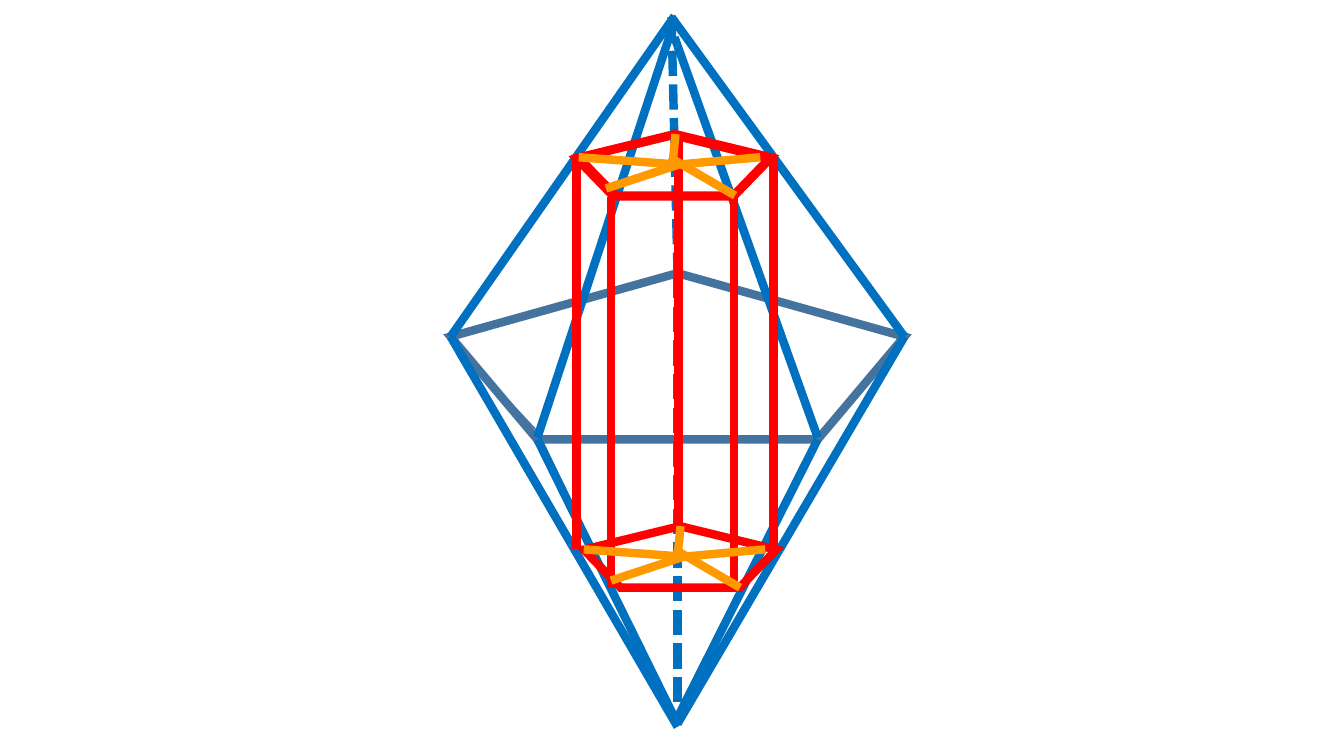
import pptx
import pptx.util
import pptx.dml.color
import pptx.enum.dml
import pptx.enum.shapes
import lxml.etree

PX = 9144
BLUE = pptx.dml.color.RGBColor(0x00, 0x70, 0xC0)
SLATE = pptx.dml.color.RGBColor(0x43, 0x73, 0x9E)
RED = pptx.dml.color.RGBColor(0xFF, 0x00, 0x00)
ORANGE = pptx.dml.color.RGBColor(0xFF, 0x99, 0x00)
DRAWING = "{http://schemas.openxmlformats.org/drawingml/2006/main}"


def add_edge(shapes, start, end, color, dashed=False):
    edge = shapes.add_connector(
        pptx.enum.shapes.MSO_CONNECTOR.STRAIGHT,
        *[value * PX for value in start + end])
    edge.line.color.rgb = color
    edge.line.width = pptx.util.Pt(6)
    if dashed:
        edge.line.dash_style = pptx.enum.dml.MSO_LINE.SQUARE_DOT
    properties = edge._element.spPr
    lxml.etree.SubElement(properties, DRAWING + "effectLst")


def add_pentagon(shapes, left, top, width, height, color):
    pentagon = shapes.add_shape(
        pptx.enum.shapes.MSO_SHAPE.REGULAR_PENTAGON,
        left * PX, top * PX, width * PX, height * PX)
    pentagon.shadow.inherit = False
    pentagon.fill.background()
    pentagon.line.color.rgb = color
    pentagon.line.width = pptx.util.Pt(6)
    outline = pentagon._element.spPr.find(DRAWING + "ln")
    lxml.etree.SubElement(outline, DRAWING + "miter", lim="800000")


deck = pptx.Presentation()
deck.slide_width = 1333 * PX
deck.slide_height = 750 * PX
slide = deck.slides.add_slide(deck.slide_layouts[6])

builder = slide.shapes.build_freeform(449, 338, scale=PX)
builder.add_line_segments(
    [(534, 429), (671, 716), (453, 351), (453, 348)], close=False)
facet = builder.convert_to_shape()
facet.shadow.inherit = False
facet.fill.background()
facet.line.color.rgb = SLATE
facet.line.width = pptx.util.Pt(1)

add_pentagon(slide.shapes, 447, 271, 450, 165, SLATE)

bipyramid_edges = [
    ((666, 17), (897, 334), False),
    ((669, 16), (447, 334), False),
    ((666, 17), (672, 271), True),
    ((666, 30), (533, 434), False),
    ((669, 37), (811, 434), False),
    ((533, 436), (672, 718), False),
    ((811, 436), (672, 712), False),
    ((897, 334), (672, 718), False),
    ((447, 334), (672, 721), False),
    ((672, 271), (672, 719), True),
]
for start, end, dashed in bipyramid_edges:
    add_edge(slide.shapes, start, end, BLUE, dashed)

add_pentagon(slide.shapes, 572, 134, 191, 61, RED)

PRISM_HEIGHT = 388
for x, top in [(572, 157), (606, 195), (728, 194), (673, 132), (767, 157)]:
    add_edge(slide.shapes, (x, top), (x, top + PRISM_HEIGHT), RED)

spokes = [
    ((664, 156), (729, 194)),
    ((676, 163), (754, 156)),
    ((674, 163), (601, 187)),
    ((669, 163), (574, 156)),
    ((667, 163), (670, 133)),
]
for shift_x, shift_y in [(5, 389), (0, 0)]:
    prism_base = slide.shapes.add_group_shape()
    add_pentagon(prism_base.shapes, 574 + shift_x, 133 + shift_y, 191, 61, RED)
    for (x1, y1), (x2, y2) in spokes:
        add_edge(prism_base.shapes, (x1 + shift_x, y1 + shift_y),
                 (x2 + shift_x, y2 + shift_y), ORANGE)

deck.save("out.pptx")
